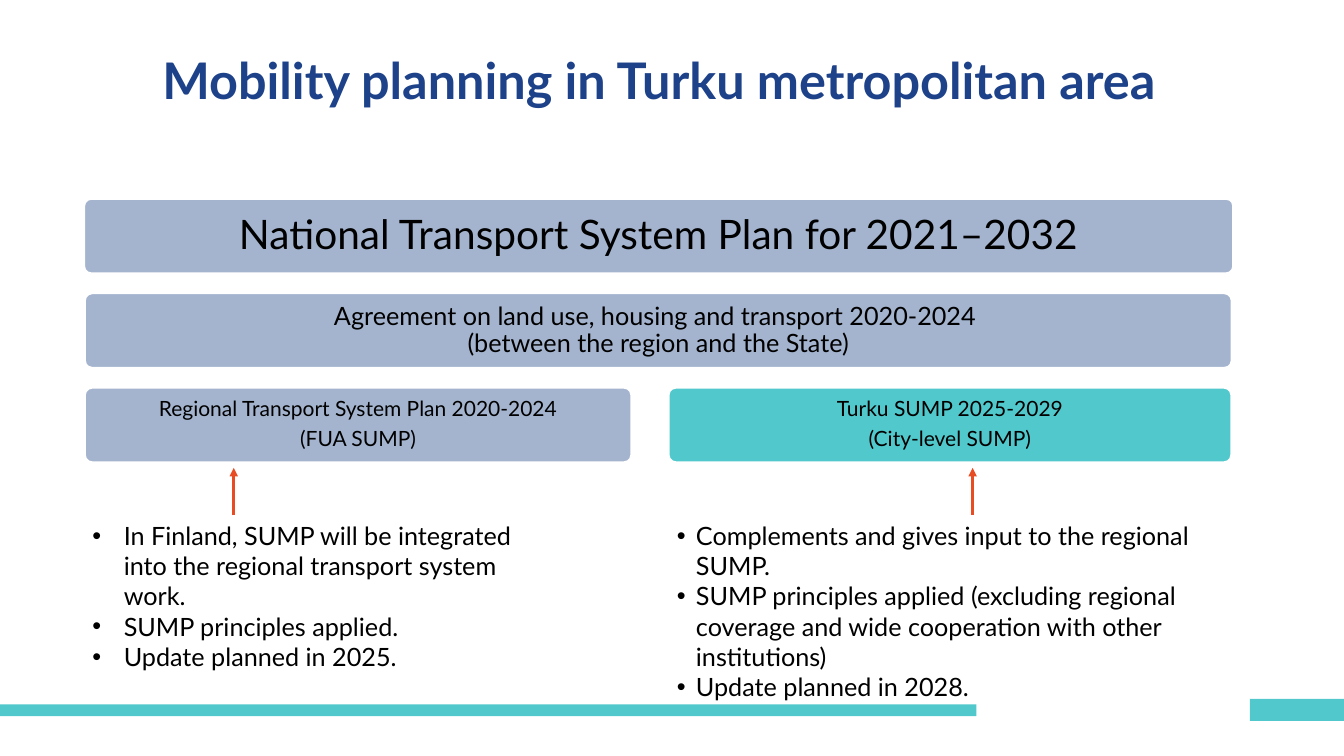
from lxml import etree
from pptx import Presentation
from pptx.dml.color import RGBColor
from pptx.enum.shapes import MSO_CONNECTOR, MSO_SHAPE
from pptx.enum.text import MSO_ANCHOR, MSO_AUTO_SIZE, PP_ALIGN
from pptx.oxml.ns import qn
from pptx.util import Cm, Pt

RECTANGLE, ROUNDED = MSO_SHAPE.RECTANGLE, MSO_SHAPE.ROUNDED_RECTANGLE
STRAIGHT = MSO_CONNECTOR.STRAIGHT
MIDDLE, TOP = MSO_ANCHOR.MIDDLE, MSO_ANCHOR.TOP
CENTER, LEFT = PP_ALIGN.CENTER, PP_ALIGN.LEFT
NO_AUTOFIT = MSO_AUTO_SIZE.NONE

NAVY, TEAL, BLUE_GREY = "1D4289", "50C8CC", "A4B4CE"
ORANGE, BLACK, WHITE = "E84C22", "000000", "FFFFFF"

PLAN_TOP, PLAN_HEIGHT, PLAN_PITCH = 5.0, 1.9, 2.38
NOTES_TOP, NOTES_HEIGHT = 12.98, 4.6

# left, width, fill, text, size, inset, row
PLANS = [
    (2.11, 28.98, BLUE_GREY, ["National Transport System Plan for 2021–2032"], 29, 0.3, 0),
    (2.13, 28.92, BLUE_GREY, ["Agreement on land use, housing and transport 2020-2024 \v"
                              "(between the region and the State)"], 18, 0.18, 1),
    (2.13, 13.79, BLUE_GREY, ["Regional Transport System Plan 2020-2024", "(FUA SUMP)"], 15, 0.15, 2),
    (16.84, 14.2, TEAL, ["Turku SUMP 2025-2029", "(City-level SUMP)"], 15, 0.15, 2),
]

# left, width, bullet indent, arrow offset, text
NOTES = [
    (2.08, 11.25, 0.79, 3.81, [
        "In Finland, SUMP will be integrated into the regional transport system work.",
        "SUMP principles applied.",
        "Update planned in 2025."]),
    (16.81, 14.86, 0.48, 7.7, [
        "Complements and gives input to the regional SUMP.",
        "SUMP principles applied (excluding regional coverage and wide "
        "cooperation with other institutions)",
        "Update planned in 2028."]),
]


def colour(value):
    return RGBColor.from_string(value)


def set_attributes(target, values):
    for name, value in values.items():
        setattr(target, name, value)


def add_bullet(paragraph, indent):
    properties = paragraph._p.get_or_add_pPr()
    properties.set("marL", str(Cm(indent)))
    properties.set("indent", str(-Cm(indent)))
    etree.SubElement(properties, qn("a:buFont")).set("typeface", "Arial")
    etree.SubElement(properties, qn("a:buChar")).set("char", "•")


def write_text(shape, lines, size, text_colour=BLACK, inset=(0.25, 0.13), anchor=MIDDLE,
               paragraph_format=None, bold=False, bullet_indent=None):
    frame = shape.text_frame
    horizontal, vertical = Cm(inset[0]), Cm(inset[1])
    set_attributes(frame, {
        "word_wrap": True, "auto_size": NO_AUTOFIT, "vertical_anchor": anchor,
        "margin_left": horizontal, "margin_right": horizontal,
        "margin_top": vertical, "margin_bottom": vertical})
    frame.text = "\n".join(lines)
    for paragraph in frame.paragraphs:
        set_attributes(paragraph, paragraph_format or {})
        if bullet_indent:
            add_bullet(paragraph, bullet_indent)
        for run in paragraph.runs:
            set_attributes(run.font, {"name": "Lato", "size": Pt(size), "bold": bold})
            run.font.color.rgb = colour(text_colour)


def add_filled_shape(slide, kind, box, fill):
    shape = slide.shapes.add_shape(kind, *map(Cm, box))
    shape.shadow.inherit = False
    shape.fill.solid()
    shape.fill.fore_color.rgb = colour(fill)
    shape.line.fill.background()
    return shape


def add_footer_bars(slide):
    for box in [(0, 17.75, 24.61, 0.3), (31.5, 17.61, 2.37, 0.56)]:
        add_filled_shape(slide, RECTANGLE, box, TEAL)


def add_title(slide, box):
    title = slide.shapes.title
    set_attributes(title, dict(zip(("left", "top", "width", "height"), map(Cm, box))))
    write_text(title, ["Mobility planning in Turku metropolitan area"], 36, NAVY, (0.13, 0.13),
               paragraph_format={"alignment": CENTER, "line_spacing": 0.9}, bold=True)


def add_plan(slide, box, fill, lines, size, inset):
    shape = add_filled_shape(slide, ROUNDED, box, fill)
    shape.adjustments[0] = 0.1
    shape.line.color.rgb = colour(WHITE)
    shape.line.width = Pt(2)
    write_text(shape, lines, size, inset=(inset, inset), paragraph_format={
        "alignment": CENTER, "line_spacing": 0.9, "space_after": Pt(0.35 * size)})


def add_notes(slide, box, indent, arrow_offset, lines):
    left, top, width, height = box
    text_box = slide.shapes.add_textbox(*map(Cm, box))
    write_text(text_box, lines, 18, anchor=TOP, paragraph_format={"alignment": LEFT},
               bullet_indent=indent)

    # Arrow up to the plan above
    arrow_x = left + arrow_offset
    arrow = slide.shapes.add_connector(
        STRAIGHT, Cm(arrow_x), Cm(top), Cm(arrow_x), Cm(top - 1.19))
    arrow.line.color.rgb = colour(ORANGE)
    arrow.line.width = Pt(2)
    etree.SubElement(arrow.line._get_or_add_ln(), qn("a:tailEnd")).set("type", "triangle")
    etree.SubElement(arrow._element.spPr, qn("a:effectLst"))


def main():
    presentation = Presentation()
    presentation.slide_width, presentation.slide_height = Cm(33.87), Cm(19.05)
    slide = presentation.slides.add_slide(presentation.slide_layouts[5])

    add_footer_bars(slide)
    add_title(slide, (1.04, 1.17, 31.14, 1.83))

    # Hierarchy of plans
    for left, width, fill, lines, size, inset, row in PLANS:
        box = (left, PLAN_TOP + row * PLAN_PITCH, width, PLAN_HEIGHT)
        add_plan(slide, box, fill, lines, size, inset)

    # Remarks under the two lowest plans
    for left, width, indent, arrow_offset, lines in NOTES:
        add_notes(slide, (left, NOTES_TOP, width, NOTES_HEIGHT), indent, arrow_offset, lines)

    presentation.save("out.pptx")


if __name__ == "__main__":
    main()
